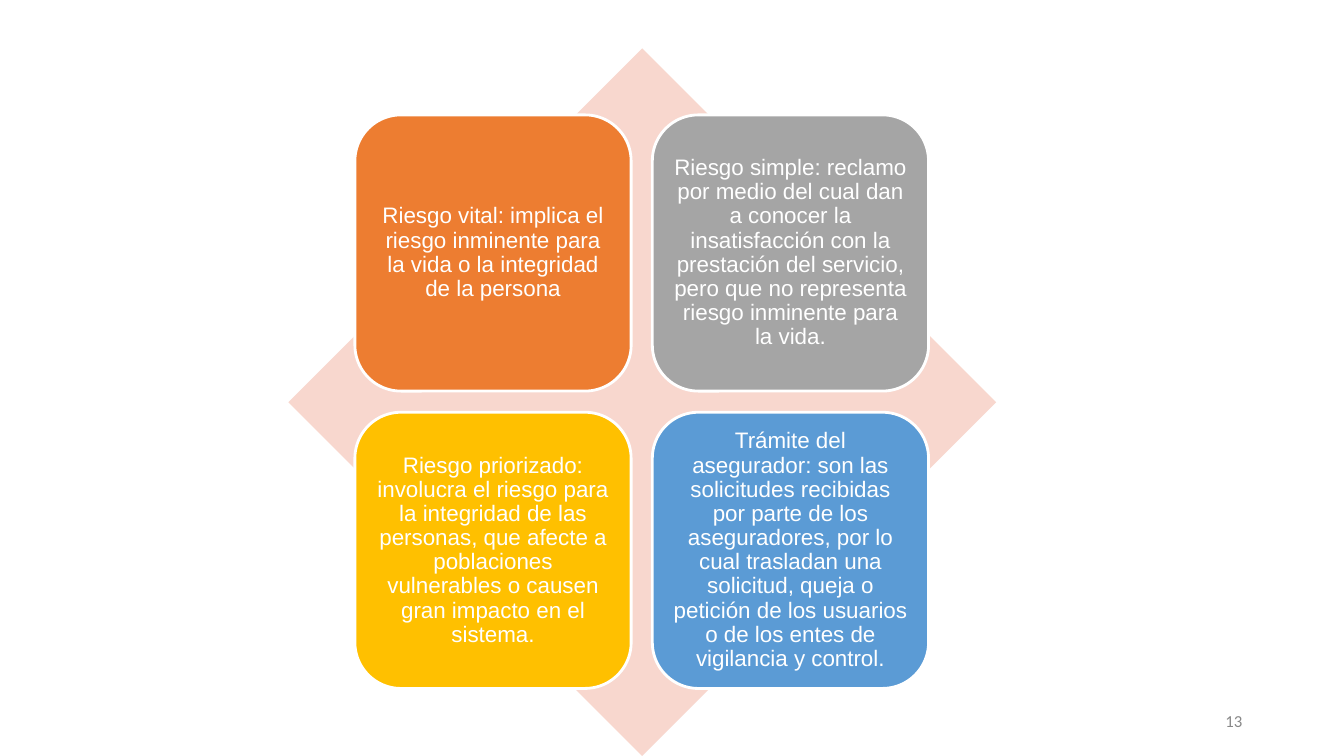
from dataclasses import dataclass

from pptx import Presentation
from pptx.dml.color import RGBColor
from pptx.enum import shapes, text
from pptx.util import Inches, Pt


@dataclass(frozen=True)
class Theme:
    diamond: str = "F8D7CE"
    white: str = "FFFFFF"
    muted: str = "888888"
    vital: str = "ED7D31"
    simple: str = "A5A5A5"
    priority: str = "FFC000"
    insurer: str = "5B9BD5"
    card_font: str = "Arial"
    number_font: str = "Calibri"
    card_size: int = 16
    number_size: int = 12


THEME = Theme()
CARD_LEFT, CARD_TOP, CARD_SIDE, CARD_STEP = 3.52, 1.14, 2.74, 2.95

CARDS = [
    (THEME.vital,
     "Riesgo vital: implica el riesgo inminente para la vida o la integridad "
     "de la persona"),
    (THEME.simple,
     "Riesgo simple: reclamo por medio del cual dan a conocer la "
     "insatisfacción con la prestación del servicio, pero que no representa "
     "riesgo inminente para la vida."),
    (THEME.priority,
     "Riesgo priorizado: involucra el riesgo para la integridad de las "
     "personas, que afecte a poblaciones vulnerables o causen gran impacto "
     "en el sistema."),
    (THEME.insurer,
     "Trámite del asegurador: son las solicitudes recibidas por parte de los "
     "aseguradores, por lo cual trasladan una solicitud, queja o petición de "
     "los usuarios o de los entes de vigilancia y control."),
]


def set_values(target, values):
    for name, value in values.items():
        setattr(target, name, value)


def write(box, words, inset, align, font, color, spacing=1.0):
    """Fill a box with one paragraph; inset is (horizontal, vertical) inches."""
    across, down = (Inches(length) for length in inset)
    set_values(box.text_frame, {
        "word_wrap": True,
        "vertical_anchor": text.MSO_ANCHOR.MIDDLE,
        "margin_left": across, "margin_right": across,
        "margin_top": down, "margin_bottom": down,
    })
    para = box.text_frame.paragraphs[0]
    set_values(para, {"alignment": align, "line_spacing": spacing})
    span = para.add_run()
    span.text = words
    set_values(span.font, font)
    span.font.color.rgb = RGBColor.from_string(color)


def add_filled(page, preset, area, fill):
    shape = page.shapes.add_shape(preset, *(Inches(length) for length in area))
    shape.shadow.inherit = False
    shape.fill.solid()
    shape.fill.fore_color.rgb = RGBColor.from_string(fill)
    shape.line.fill.background()
    return shape


def add_card(page, index, fill, words):
    row, column = divmod(index, 2)
    area = (CARD_LEFT + column * CARD_STEP, CARD_TOP + row * CARD_STEP,
            CARD_SIDE, CARD_SIDE)
    card = add_filled(page, shapes.MSO_SHAPE.ROUNDED_RECTANGLE, area, fill)
    card.line.color.rgb = RGBColor.from_string(THEME.white)
    card.line.width = Pt(2)
    write(card, words, (0.07, 0.07), text.PP_ALIGN.CENTER,
          {"name": THEME.card_font, "size": Pt(THEME.card_size)},
          THEME.white, spacing=0.9)


def add_page_number(page, number):
    box = page.shapes.add_textbox(Inches(9.42), Inches(6.95),
                                  Inches(3), Inches(0.4))
    write(box, number, (0.1, 0.05), text.PP_ALIGN.RIGHT,
          {"name": THEME.number_font, "size": Pt(THEME.number_size)},
          THEME.muted)


def main():
    deck = Presentation()
    set_values(deck, {"slide_width": Inches(13.33),
                      "slide_height": Inches(7.5)})
    page = deck.slides.add_slide(deck.slide_layouts[6])
    add_page_number(page, "13")
    add_filled(page, shapes.MSO_SHAPE.DIAMOND, (2.86, 0.48, 7.02, 7.02),
               THEME.diamond)
    for index, (fill, words) in enumerate(CARDS):
        add_card(page, index, fill, words)
    deck.save("out.pptx")


if __name__ == "__main__":
    main()
